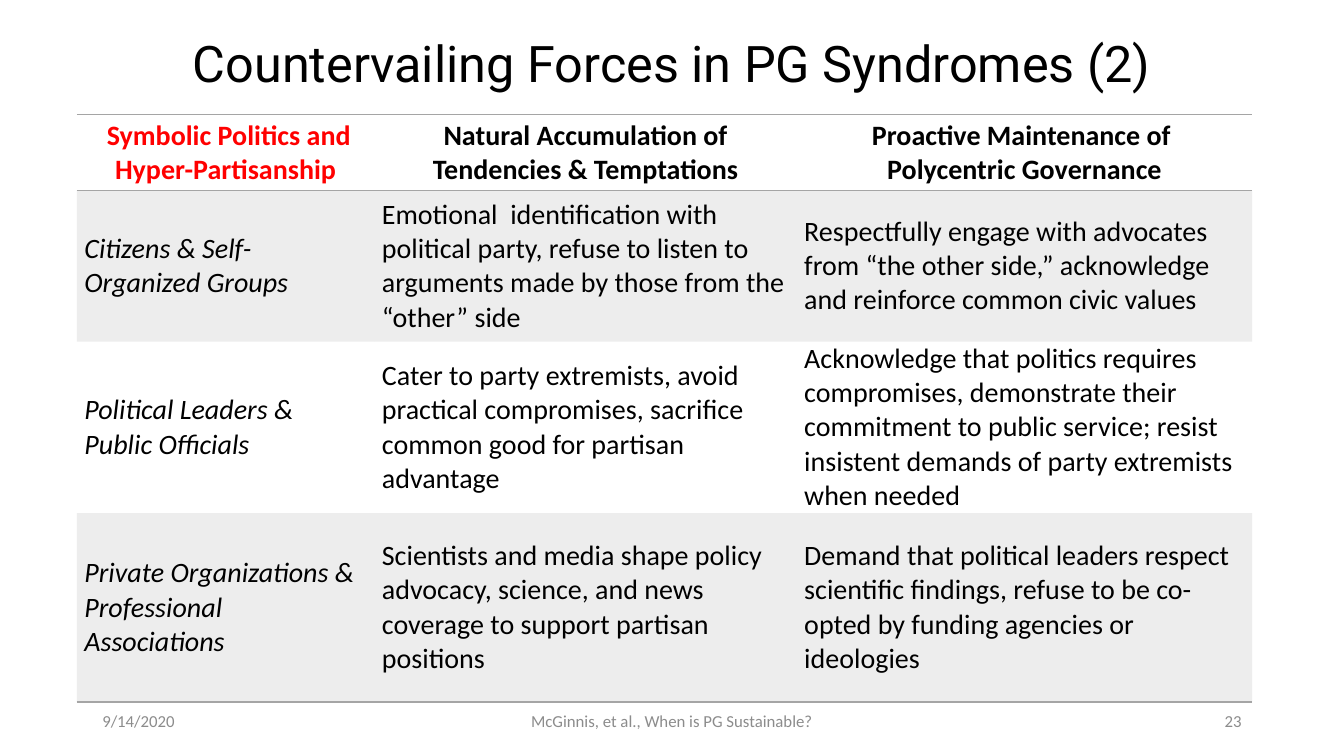
import pptx
import pptx.util
import pptx.dml.color
import pptx.enum.text
import pptx.oxml
import pptx.oxml.ns

Pt = pptx.util.Pt
Align = pptx.enum.text.PP_ALIGN
Anchor = pptx.enum.text.MSO_ANCHOR
NS = pptx.oxml.ns.nsdecls("a")


def color(text):
    """Turn a hex string into a colour."""
    return pptx.dml.color.RGBColor.from_string(text)


class Deck:
    """Hold the style and the current slide."""

    font = "Calibri"
    ink, red, gray, rule = "000000", "FF0000", "8C8C8C", "A5A5A5"
    plain = "{2D5ABB26-0587-4C30-8999-92F81FD0307C}"

    def __init__(self, prs):
        self.slide = prs.slides.add_slide(prs.slide_layouts[5])

    def add(self, para, text, size, ink, align=Align.LEFT, font=None, bold=False, italic=False):
        para.alignment = align
        run = para.add_run()
        run.text = text
        run.font.name = font or self.font
        run.font.size = Pt(size)
        run.font.bold = bold
        run.font.italic = italic
        run.font.color.rgb = color(ink)

    def place(self, shape, left, top, width, height):
        shape.left, shape.top = Pt(left), Pt(top)
        shape.width, shape.height = Pt(width), Pt(height)

    def title(self, text, *box):
        shape = self.slide.shapes.title
        self.place(shape, *box)
        frame = shape.text_frame
        frame.auto_size = pptx.enum.text.MSO_AUTO_SIZE.NONE
        frame.vertical_anchor = Anchor.MIDDLE
        para = frame.paragraphs[0]
        para.line_spacing = 0.9
        self.add(para, text, 36, self.ink, Align.CENTER, "Roboto")

    def label(self, text, align, *box):
        frame = self.slide.shapes.add_textbox(*map(Pt, box)).text_frame
        frame.word_wrap = True
        frame.vertical_anchor = Anchor.MIDDLE
        self.add(frame.paragraphs[0], text, 12, self.gray, align)

    def edge(self, cell, sides):
        props = cell._tc.get_or_add_tcPr()
        for spot, side in enumerate(sides):
            props.insert(spot, pptx.oxml.parse_xml(
                f'<a:ln{side} {NS} w="12700"><a:solidFill><a:srgbClr val="{self.rule}"/>'
                f'</a:solidFill></a:ln{side}>'))

    def shade(self, cell):
        cell.fill.solid()
        cell.fill.fore_color.rgb = color(self.rule)
        tint = next(cell._tc.tcPr.iter(pptx.oxml.ns.qn("a:srgbClr")))
        tint.append(pptx.oxml.parse_xml(f'<a:alpha {NS} val="20000"/>'))

    def fill(self, cell, text, row, col):
        cell.vertical_anchor = Anchor.MIDDLE
        cell.margin_left = cell.margin_right = Pt(5.4)
        cell.margin_top = cell.margin_bottom = 0
        head = row == 0
        frame = cell.text_frame
        for spot, line in enumerate(text.split("\n")):
            para = frame.add_paragraph() if spot else frame.paragraphs[0]
            self.add(para, line, 20, self.red if head and col == 0 else self.ink,
                     Align.CENTER if head else Align.LEFT,
                     bold=head, italic=not head and col == 0)

    def table(self, rows, wide, high, left, top):
        shape = self.slide.shapes.add_table(
            len(rows), len(wide), Pt(left), Pt(top), Pt(sum(wide)), Pt(sum(high)))
        grid = shape.table
        grid.horz_banding = False
        next(grid._tbl.iter(pptx.oxml.ns.qn("a:tableStyleId"))).text = self.plain
        for col, size in zip(grid.columns, wide):
            col.width = Pt(size)
        for row, size in zip(grid.rows, high):
            row.height = Pt(size)
        for r, row in enumerate(rows):
            for c, text in enumerate(row):
                cell = grid.cell(r, c)
                self.fill(cell, text, r, c)
                if r % 2:
                    self.shade(cell)
                else:
                    cell.fill.background()
                self.edge(cell, {0: "TB", len(rows) - 1: "B"}.get(r, ""))


ROWS = [
    (" Symbolic Politics and Hyper-Partisanship",
     "Natural Accumulation of Tendencies & Temptations",
     "Proactive Maintenance of \nPolycentric Governance"),
    ("Citizens & Self-Organized Groups",
     "Emotional  identification with political party, refuse to listen to arguments "
     "made by those from the “other” side",
     "Respectfully engage with advocates from “the other side,” acknowledge and "
     "reinforce common civic values"),
    ("Political Leaders & Public Officials",
     "Cater to party extremists, avoid practical compromises, sacrifice common good "
     "for partisan advantage",
     "Acknowledge that politics requires compromises, demonstrate their commitment to "
     "public service; resist insistent demands of party extremists when needed"),
    ("Private Organizations & Professional Associations",
     "Scientists and media shape policy advocacy, science, and news coverage to "
     "support partisan positions",
     "Demand that political leaders respect scientific findings, refuse to be "
     "co-opted by funding agencies or ideologies"),
]


def main():
    prs = pptx.Presentation()
    prs.slide_width, prs.slide_height = Pt(960), Pt(540)
    deck = Deck(prs)
    deck.title("Countervailing Forces in PG Syndromes (2)", 66, 28.8, 828, 37.4)
    deck.table(ROWS, (212.5, 301.7, 325.4), (54, 108, 108, 135), 54.9, 82)
    deck.label("9/14/2020", Align.LEFT, 66, 500.5, 216, 28.8)
    deck.label("McGinnis, et al., When is PG Sustainable?", Align.CENTER, 318, 500.5, 324, 28.8)
    deck.label("23", Align.RIGHT, 678, 500.5, 216, 28.8)
    prs.save("out.pptx")


if __name__ == "__main__":
    main()
